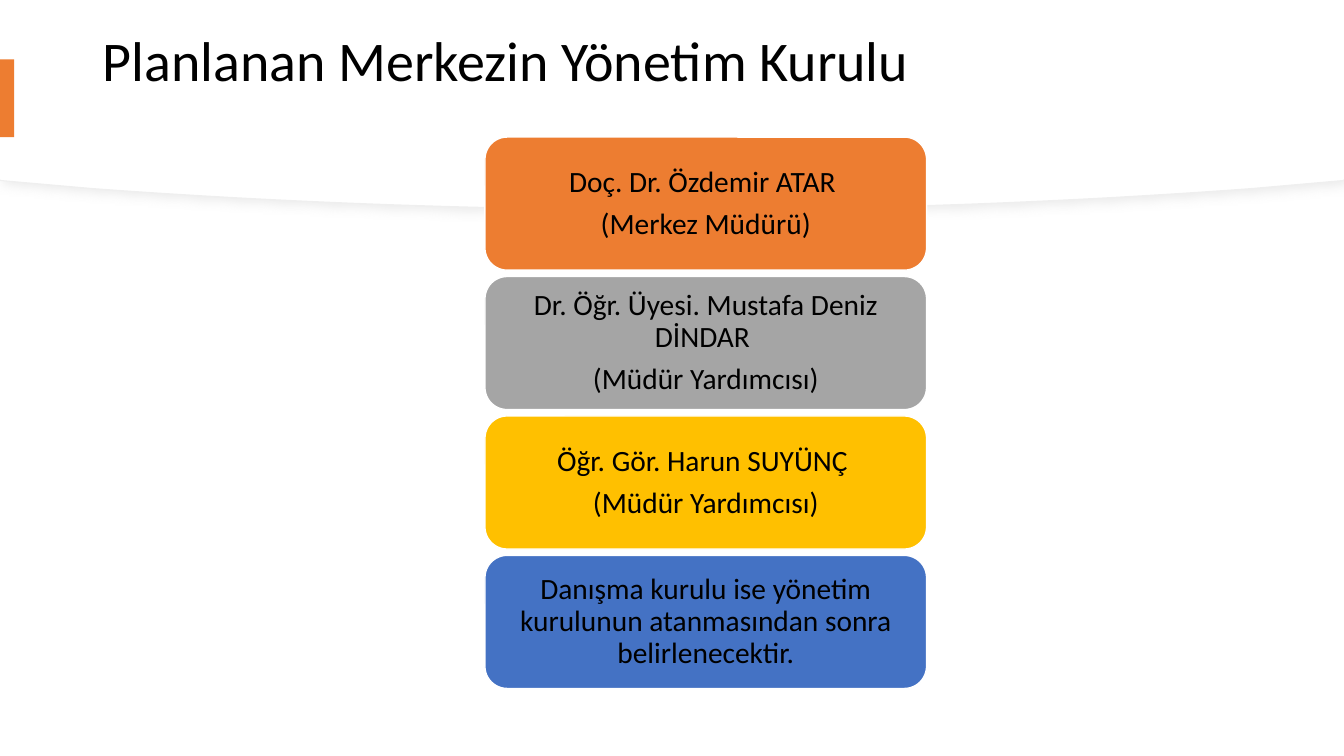
from dataclasses import dataclass

from lxml import etree
from pptx import Presentation
from pptx.dml.color import RGBColor
from pptx.enum.shapes import MSO_SHAPE
from pptx.enum.text import MSO_ANCHOR, PP_ALIGN
from pptx.oxml.ns import qn
from pptx.util import Inches, Pt

RECT, ROUND_RECT = MSO_SHAPE.RECTANGLE, MSO_SHAPE.ROUNDED_RECTANGLE
TOP, MIDDLE = MSO_ANCHOR.TOP, MSO_ANCHOR.MIDDLE
CENTER, LEFT = PP_ALIGN.CENTER, PP_ALIGN.LEFT

FONT = "Calibri"
ORANGE = "ED7D31"
WHITE = "FFFFFF"
BLACK = "000000"
SLIDE_W, SLIDE_H = 13.33, 7.5
CARD_X, CARD_W, CARD_H = 4.81, 4.38, 1.32
FIRST_Y, LAST_Y = 1.36, 5.51
CURVE_STEPS = 24


@dataclass
class Card:
    color: str
    lines: list[str]


CARDS = [
    Card(ORANGE, ["Doç. Dr. Özdemir ATAR ", "(Merkez Müdürü)"]),
    Card("A5A5A5", ["Dr. Öğr. Üyesi. Mustafa Deniz DİNDAR ", "(Müdür Yardımcısı)"]),
    Card("FFC000", ["Öğr. Gör. Harun SUYÜNÇ ", "(Müdür Yardımcısı)"]),
    Card("4472C4", ["Danışma kurulu ise yönetim kurulunun atanmasından sonra belirlenecektir."]),
]


def rgb(color: str) -> RGBColor:
    return RGBColor.from_string(color)


def paint(sp, fill: str, line: str = "", width: float = 1) -> None:
    sp.shadow.inherit = False
    sp.fill.solid()
    sp.fill.fore_color.rgb = rgb(fill)
    if line:
        sp.line.color.rgb = rgb(line)
        sp.line.width = Pt(width)
    else:
        sp.line.fill.background()


def write(tf, lines: list[str], size: float, align, space_after: float = 0) -> None:
    tf.word_wrap = True
    tf.text = "\n".join(lines)
    for p in tf.paragraphs:
        p.alignment = align
        p.line_spacing = 0.9
        p.space_after = Pt(space_after)
        for r in p.runs:
            r.font.name = FONT
            r.font.size = Pt(size)
            r.font.color.rgb = rgb(BLACK)


def bezier(points: list[tuple[float, float]]) -> list[tuple[float, float]]:
    """Sample a cubic curve after its first point."""
    curve = []
    for step in range(1, CURVE_STEPS + 1):
        t = step / CURVE_STEPS
        weights = ((1 - t) ** 3, 3 * t * (1 - t) ** 2, 3 * t * t * (1 - t), t ** 3)
        curve.append(tuple(sum(w * pt[axis] for w, pt in zip(weights, points))
                           for axis in (0, 1)))
    return curve


def add_header(s, bottom: float):
    """Draw the white header area with its curved lower edge."""
    edge, shoulder, low = bottom - 0.29, bottom - 0.21, bottom - 0.08
    start, middle, end = (12.42, shoulder), (6.67, bottom), (0.91, shoulder)
    outline = [(SLIDE_W, 0), (SLIDE_W, edge), start,
               *bezier([start, (10.65, low), (8.71, bottom), middle]),
               *bezier([middle, (4.63, bottom), (2.68, low), end]),
               (0, edge)]
    builder = s.shapes.build_freeform(0, 0, scale=1.0)
    builder.add_line_segments([(Inches(x), Inches(y)) for x, y in outline], close=True)
    return builder.convert_to_shape()


def add_shadow(sp, color: str) -> None:
    effects = sp._element.spPr.find(qn("a:effectLst"))
    shadow = etree.SubElement(effects, qn("a:outerShdw"), blurRad=str(Pt(7)),
                              dist=str(Pt(3)), dir=str(45 * 60000),
                              algn="tl", rotWithShape="0")
    tint = etree.SubElement(shadow, qn("a:srgbClr"), val=color)
    etree.SubElement(tint, qn("a:alpha"), val="50000")


def add_card(s, card: Card, y: float) -> None:
    sp = s.shapes.add_shape(ROUND_RECT, Inches(CARD_X), Inches(y),
                            Inches(CARD_W), Inches(CARD_H))
    paint(sp, card.color, WHITE)
    tf = sp.text_frame
    tf.vertical_anchor = MIDDLE
    tf.margin_left = tf.margin_right = Inches(0.09)
    tf.margin_top = tf.margin_bottom = Inches(0.04)
    write(tf, card.lines, 21, CENTER, 7.35)


def main() -> None:
    prs = Presentation()
    prs.slide_width, prs.slide_height = Inches(SLIDE_W), Inches(SLIDE_H)
    s = prs.slides.add_slide(prs.slide_layouts[6])

    # Curved header: shadowed outline below, plain white on top
    header = add_header(s, 2.08)
    paint(header, WHITE, "EFEFEF", 0.75)
    add_shadow(header, "D9D9D9")
    paint(add_header(s, 2.07), WHITE)

    # Title
    title = s.shapes.add_textbox(Inches(0.92), Inches(0.28), Inches(11.5), Inches(1.39))
    title.text_frame.vertical_anchor = TOP
    write(title.text_frame, ["Planlanan Merkezin Yönetim Kurulu"], 40, LEFT)

    # Accent bar at the left edge
    accent = s.shapes.add_shape(RECT, 0, Inches(0.59), Inches(0.14), Inches(0.77))
    paint(accent, ORANGE)

    # Board members, evenly stacked
    pitch = (LAST_Y - FIRST_Y) / (len(CARDS) - 1)
    for i, card in enumerate(CARDS):
        add_card(s, card, FIRST_Y + i * pitch)

    prs.save("out.pptx")


if __name__ == "__main__":
    main()
